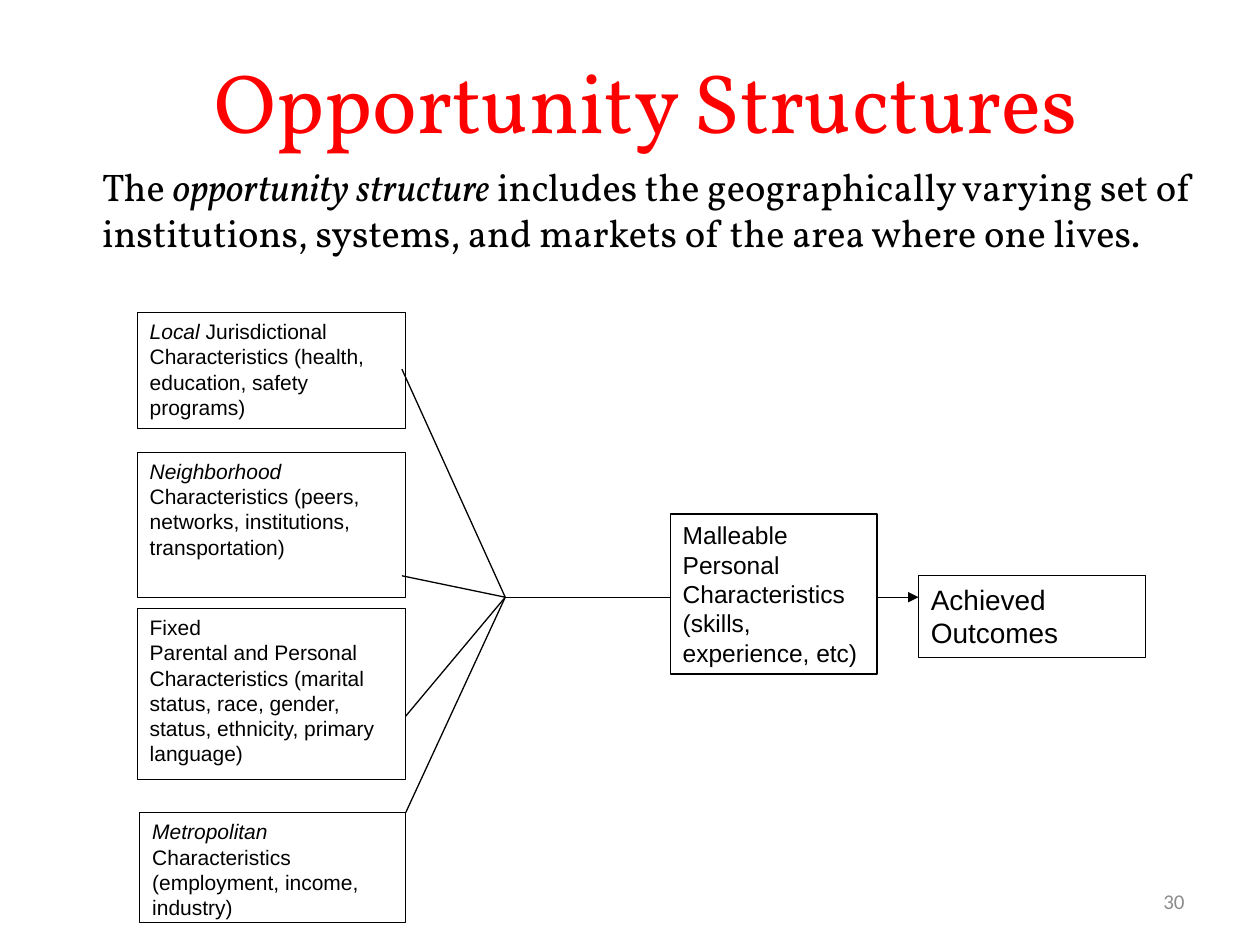
from lxml import etree
from pptx import Presentation
from pptx.dml.color import RGBColor
from pptx.enum.shapes import MSO_CONNECTOR, MSO_SHAPE
from pptx.enum.text import MSO_ANCHOR, MSO_AUTO_SIZE, PP_ALIGN
from pptx.oxml.ns import qn
from pptx.util import Inches, Pt

RECTANGLE = MSO_SHAPE.RECTANGLE
STRAIGHT = MSO_CONNECTOR.STRAIGHT
TOP, MIDDLE = MSO_ANCHOR.TOP, MSO_ANCHOR.MIDDLE
LEFT, CENTER, RIGHT = PP_ALIGN.LEFT, PP_ALIGN.CENTER, PP_ALIGN.RIGHT
NO_AUTOFIT = MSO_AUTO_SIZE.NONE

COLORS = {"title": "FF0000", "ink": "000000", "box": "FFFFFF", "number": "8C8C8C"}

# Each paragraph is a list of (words, italic) runs.
TITLE = [[("Opportunity Structures", False)]]
DEFINITION = [[
    ("The ", False),
    ("opportunity structure", True),
    (" includes the geographically varying set of institutions, systems, "
     "and markets of the area where one lives.", False),
]]
PAGE_NUMBER = [[("30", False)]]

BOXES_BEHIND_LINES = [
    ((7.29, 4.57, 1.8, 0.65), 16, [[("Achieved Outcomes", False)]]),
    ((1.11, 6.45, 2.11, 0.87), 12, [
        [("Metropolitan", True), (" Characteristics", False)],
        [("(employment, income, industry)", False)],
    ]),
    ((1.09, 2.48, 2.13, 0.92), 12, [[
        ("Local", True),
        (" Jurisdictional Characteristics (health, education, safety programs)", False),
    ]]),
    ((1.09, 3.59, 2.13, 1.15), 12, [[
        ("Neighborhood", True),
        (" Characteristics (peers, networks, institutions, transportation)", False),
    ]]),
]
BOXES_OVER_LINES = [
    ((5.32, 4.08, 1.64, 1.27), 14, [
        [("Malleable Personal Characteristics", False)],
        [("(skills, experience, etc)", False)],
    ]),
    ((1.09, 4.83, 2.13, 1.36), 12, [
        [("Fixed", False)],
        [("Parental and Personal Characteristics (marital status, race, gender, "
          "status, ethnicity, primary language)", False)],
    ]),
]

JUNCTION = (4.01, 4.74)
FACTOR_EXITS = [(3.19, 2.93), (3.19, 4.57), (3.19, 5.72), (3.22, 6.45)]
PERSONAL_ENTRY = (5.32, 4.74)
OUTCOME_ARROW = ((6.8, 4.74), (7.29, 4.74))


def place(shape, area):
    shape.left, shape.top, shape.width, shape.height = map(Inches, area)


def write(shape, paragraphs, size, font="Arial", color="ink", align=LEFT, anchor=TOP, indent=None):
    frame = shape.text_frame
    frame.word_wrap = True
    frame.auto_size = NO_AUTOFIT
    frame.vertical_anchor = anchor
    for index, runs in enumerate(paragraphs):
        paragraph = frame.add_paragraph() if index else frame.paragraphs[0]
        paragraph.alignment = align
        paragraph.space_before = Pt(0)
        if indent is not None:
            properties = paragraph._p.get_or_add_pPr()
            properties.set("marL", str(Inches(indent)))
            properties.set("indent", "0")
            etree.SubElement(properties, qn("a:buNone"))
        for words, italic in runs:
            run = paragraph.add_run()
            run.text = words
            run.font.name = font
            run.font.size = Pt(size)
            run.font.italic = italic
            run.font.color.rgb = RGBColor.from_string(COLORS[color])


def add_box(slide, area, size, paragraphs):
    box = slide.shapes.add_shape(RECTANGLE, *map(Inches, area))
    box.shadow.inherit = False
    box.fill.solid()
    box.fill.fore_color.rgb = RGBColor.from_string(COLORS["box"])
    box.line.color.rgb = RGBColor.from_string(COLORS["ink"])
    box.line.width = Pt(0.75)
    write(box, paragraphs, size)


def add_line(slide, start, end, arrow=False):
    line = slide.shapes.add_connector(STRAIGHT, *map(Inches, start + end))
    line.line.color.rgb = RGBColor.from_string(COLORS["ink"])
    line.line.width = Pt(0.75)
    if arrow:
        etree.SubElement(line.line._get_or_add_ln(), qn("a:tailEnd"), type="triangle")
    etree.SubElement(line._element.spPr, qn("a:effectLst"))


def main():
    deck = Presentation()
    deck.slide_width, deck.slide_height = Inches(10), Inches(7.5)
    slide = deck.slides.add_slide(deck.slide_layouts[1])

    title, definition = slide.placeholders
    place(title, (0.67, 0.25, 8.92, 1.08))
    write(title, TITLE, 48, font="Vollkorn", color="title", align=CENTER, anchor=MIDDLE)
    place(definition, (0.33, 1.24, 9.34, 5.72))
    write(definition, DEFINITION, 22, font="Vollkorn", indent=0.38)

    for box in BOXES_BEHIND_LINES:
        add_box(slide, *box)
    for factor_exit in FACTOR_EXITS:
        add_line(slide, factor_exit, JUNCTION)
    add_line(slide, JUNCTION, PERSONAL_ENTRY)
    add_line(slide, *OUTCOME_ARROW, arrow=True)
    for box in BOXES_OVER_LINES:
        add_box(slide, *box)

    number = slide.shapes.add_textbox(*map(Inches, (7.17, 6.95, 2.33, 0.4)))
    write(number, PAGE_NUMBER, 12, font="Calibri", color="number", align=RIGHT, anchor=MIDDLE)

    deck.save("out.pptx")


if __name__ == "__main__":
    main()
